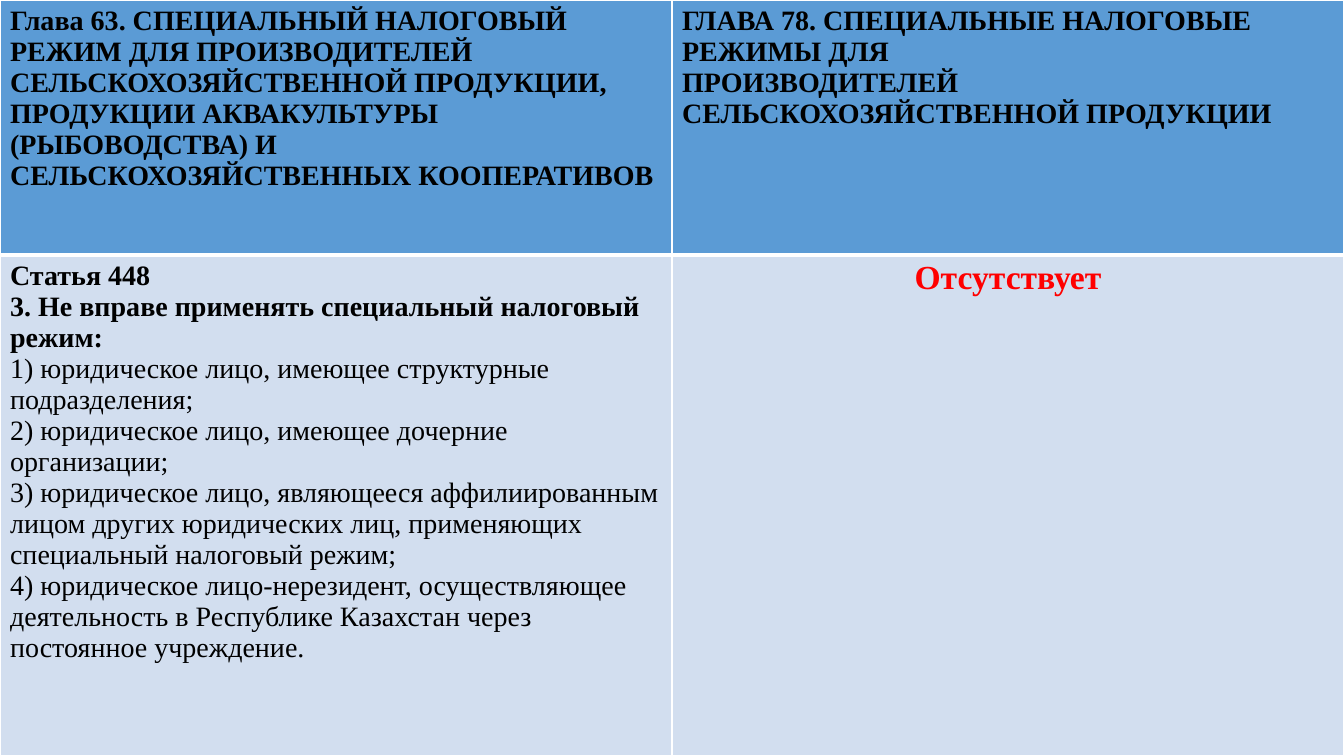
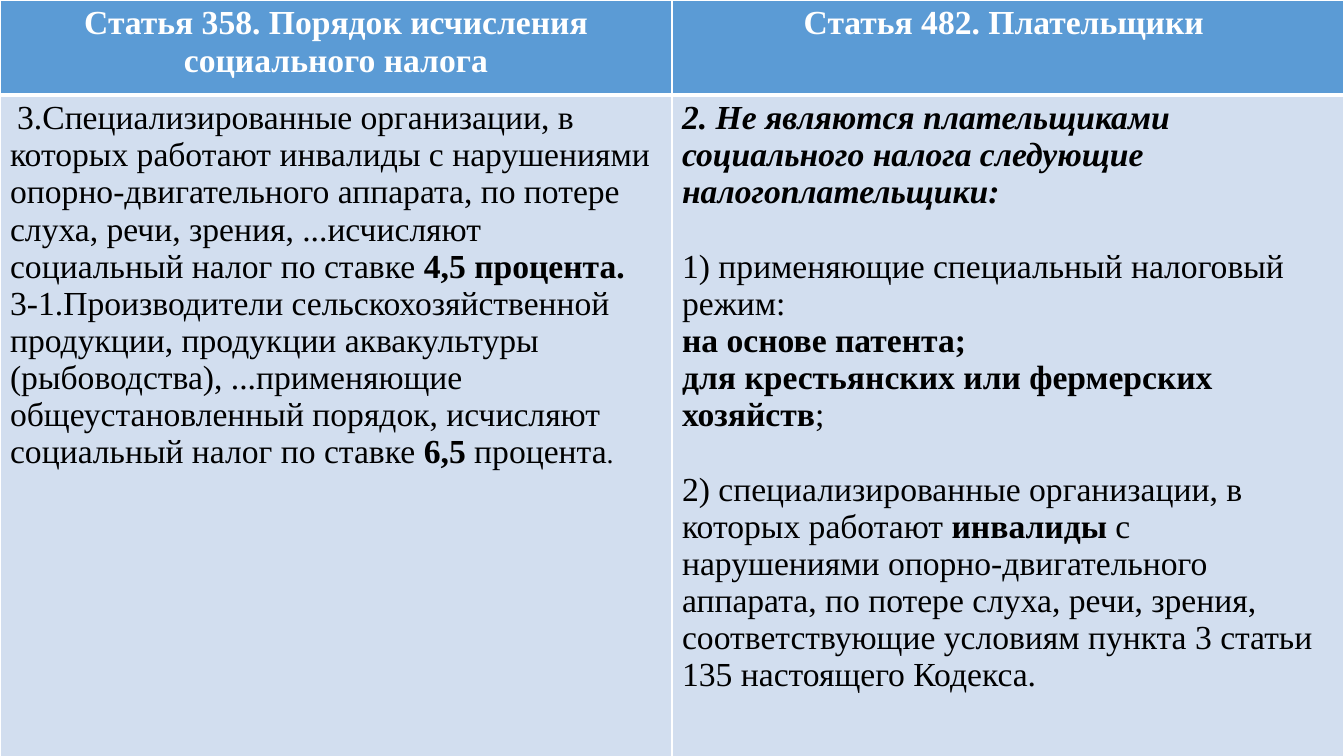
from lxml.etree import SubElement
from pptx import Presentation
from pptx.dml.color import RGBColor
from pptx.enum.text import PP_ALIGN
from pptx.oxml.ns import qn
from pptx.util import Inches, Pt

FONT = "Times New Roman"
BLACK = RGBColor(0x00, 0x00, 0x00)
WHITE = RGBColor(0xFF, 0xFF, 0xFF)
RED = RGBColor(0xFF, 0x00, 0x00)
HEADER_BLUE = RGBColor(0x5B, 0x9B, 0xD5)
BODY_BLUE = RGBColor(0xD2, 0xDE, 0xEF)

SLIDE_WIDTH = 13.33
SLIDE_HEIGHT = 7.5
LINE_GAP = 26.5
BOLD = {"bold": True}
BOLD_ITALIC = {"bold": True, "italic": True}


def write_text(paragraph, text, size=20, color=BLACK, bold=False, italic=False):
    run = paragraph.add_run()
    run.text = text
    run.font.name = FONT
    run.font.size = Pt(size)
    run.font.color.rgb = color
    run.font.bold = bold
    run.font.italic = italic


def line(*runs, before=0, indent=0):
    return {"runs": runs, "before": before, "indent": indent}


def draw_borders(cell, bottom_width):
    properties = cell._tc.get_or_add_tcPr()
    widths = {"a:lnL": 1, "a:lnR": 1, "a:lnT": 1, "a:lnB": bottom_width}
    for position, (side, width) in enumerate(widths.items()):
        border = SubElement(properties, qn(side), w=str(Pt(width)))
        fill = SubElement(border, qn("a:solidFill"))
        SubElement(fill, qn("a:srgbClr"), val=str(WHITE))
        properties.insert(position, border)


def fill_cell(cell, lines, background, bottom_width, align=PP_ALIGN.LEFT, **base):
    cell.fill.solid()
    cell.fill.fore_color.rgb = background
    draw_borders(cell, bottom_width)
    frame = cell.text_frame
    for index, content in enumerate(lines):
        paragraph = frame.add_paragraph() if index else frame.paragraphs[0]
        paragraph.alignment = align
        if content["before"]:
            paragraph.space_before = Pt(content["before"])
        if content["indent"]:
            paragraph._p.get_or_add_pPr().set("indent", str(Inches(content["indent"])))
        for text, style in content["runs"]:
            write_text(paragraph, text, **{**base, **style})


def add_comparison(slide, box, header_height, headers, bodies, header_style, body_styles):
    left, top, width, height = (Inches(value) for value in box)
    table = slide.shapes.add_table(2, 2, left, top, width, height).table
    for column in table.columns:
        column.width = width // 2
    table.rows[0].height = Inches(header_height)
    table.rows[1].height = height - Inches(header_height)
    for index, (header, body, body_style) in enumerate(zip(headers, bodies, body_styles)):
        fill_cell(table.cell(0, index), header, HEADER_BLUE, 3, **header_style)
        fill_cell(table.cell(1, index), body, BODY_BLUE, 1, **body_style)


def build_farm_regime(slide):
    headers = [
        [
            line(("Глава 63. СПЕЦИАЛЬНЫЙ НАЛОГОВЫЙ РЕЖИМ ДЛЯ ПРОИЗВОДИТЕЛЕЙ "
                  "СЕЛЬСКОХОЗЯЙСТВЕННОЙ ПРОДУКЦИИ,", {})),
            line(("ПРОДУКЦИИ АКВАКУЛЬТУРЫ (РЫБОВОДСТВА) И "
                  "СЕЛЬСКОХОЗЯЙСТВЕННЫХ КООПЕРАТИВОВ", {})),
        ],
        [
            line(("ГЛАВА 78. СПЕЦИАЛЬНЫЕ НАЛОГОВЫЕ РЕЖИМЫ ДЛЯ", {})),
            line(("ПРОИЗВОДИТЕЛЕЙ СЕЛЬСКОХОЗЯЙСТВЕННОЙ ПРОДУКЦИИ", {})),
        ],
    ]
    bodies = [
        [
            line(("Статья 448", BOLD)),
            line(("3. Не вправе применять специальный налоговый режим:", BOLD)),
            line(("1) юридическое лицо, имеющее структурные подразделения;", {})),
            line(("2) юридическое лицо, имеющее дочерние организации;", {})),
            line(("3) юридическое лицо, являющееся аффилиированным лицом других "
                  "юридических лиц, применяющих специальный налоговый режим;", {})),
            line(("4) юридическое лицо-нерезидент, осуществляющее деятельность в "
                  "Республике Казахстан через постоянное учреждение.", {})),
        ],
        [line(("Отсутствует", BOLD))],
    ]
    add_comparison(
        slide, (0, 0, SLIDE_WIDTH, SLIDE_HEIGHT), 2.53, headers, bodies,
        header_style=BOLD,
        body_styles=[{}, {"size": 24, "color": RED, "align": PP_ALIGN.CENTER}],
    )


def build_social_tax(slide):
    headers = [
        [line(("Статья 358. Порядок исчисления социального налога", {}))],
        [line(("Статья 482. Плательщики ", {}))],
    ]
    bodies = [
        [
            line(
                ("3.Специализированные организации, в которых работают инвалиды с "
                 "нарушениями опорно-двигательного аппарата, по потере слуха, речи, "
                 "зрения, ...исчисляют социальный налог по ставке ", {}),
                ("4,5 процента.", BOLD),
                indent=0.07,
            ),
            line(
                ("3-1.Производители сельскохозяйственной продукции, продукции "
                 "аквакультуры (рыбоводства), ...применяющие общеустановленный "
                 "порядок, исчисляют социальный налог по ставке ", {}),
                ("6,5 ", BOLD),
                ("процента", {}),
                (".", {"size": 20}),
            ),
        ],
        [
            line(("2. Не являются плательщиками социального налога следующие "
                  "налогоплательщики:", BOLD_ITALIC)),
            line(("1) применяющие специальный налоговый режим:", {}), before=LINE_GAP),
            line(("на основе патента;", BOLD)),
            line(("для крестьянских или фермерских хозяйств", BOLD), (";", {})),
            line(
                ("2) специализированные организации, в которых работают ", {}),
                ("инвалиды", BOLD),
                (" с нарушениями опорно-двигательного аппарата, по потере слуха, "
                 "речи, зрения, соответствующие условиям пункта 3 статьи 135 "
                 "настоящего Кодекса.", {}),
                before=LINE_GAP,
            ),
        ],
    ]
    add_comparison(
        slide, (0, 0, SLIDE_WIDTH, 7.77), 0.94, headers, bodies,
        header_style={"size": 24, "color": WHITE, "bold": True, "align": PP_ALIGN.CENTER},
        body_styles=[{"size": 24}, {"size": 24}],
    )


def main():
    presentation = Presentation()
    presentation.slide_width = Inches(SLIDE_WIDTH)
    presentation.slide_height = Inches(SLIDE_HEIGHT)
    blank_layout = presentation.slide_layouts[6]
    for build in (build_farm_regime, build_social_tax):
        build(presentation.slides.add_slide(blank_layout))
    presentation.save("out.pptx")


if __name__ == "__main__":
    main()
